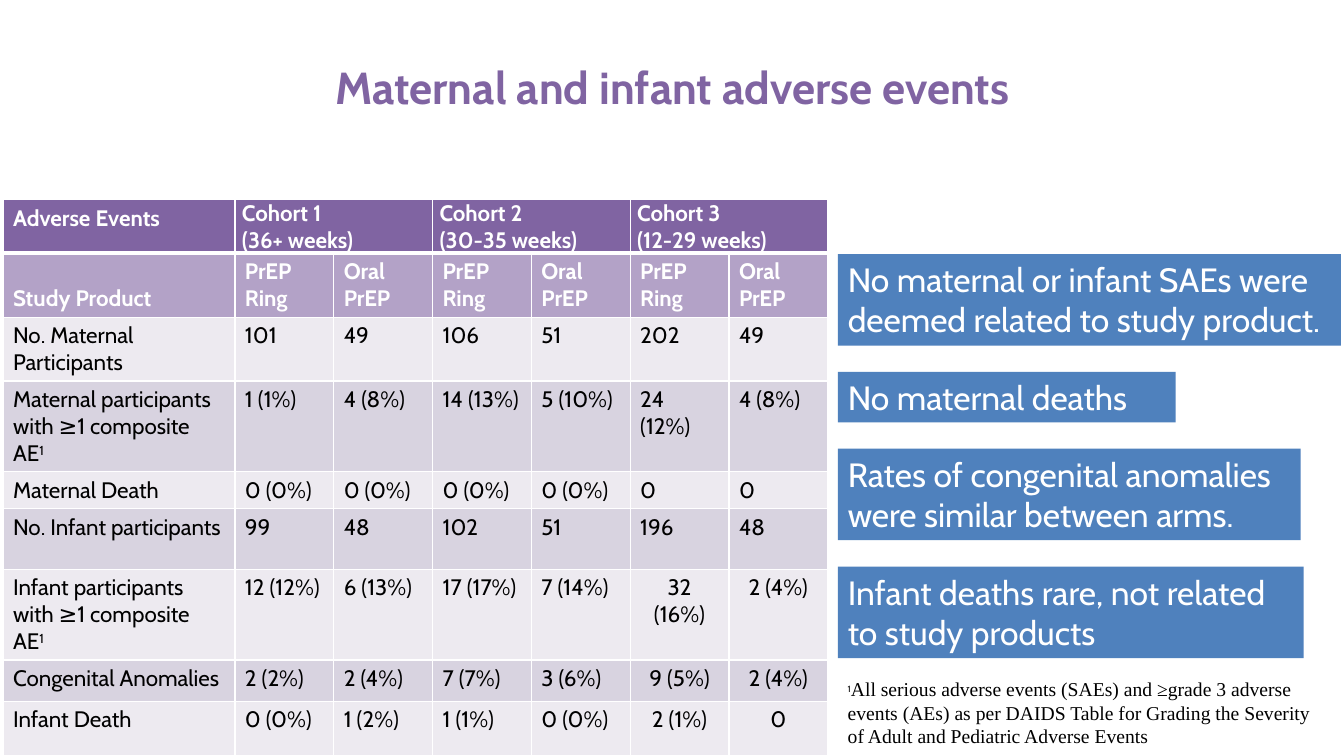
from lxml import etree
from pptx import Presentation
from pptx.dml.color import RGBColor
from pptx.enum.shapes import MSO_SHAPE
from pptx.enum.text import MSO_ANCHOR, PP_ALIGN
from pptx.oxml.ns import qn
from pptx.util import Pt

RECTANGLE = MSO_SHAPE.RECTANGLE
TOP, MIDDLE, BOTTOM = MSO_ANCHOR.TOP, MSO_ANCHOR.MIDDLE, MSO_ANCHOR.BOTTOM
LEFT, CENTER = PP_ALIGN.LEFT, PP_ALIGN.CENTER

COLORS = {
    "purple": "8064A2", "lilac": "B3A2C7", "pale": "EDEAF0", "mist": "D8D3E0",
    "blue": "4F81BD", "white": "FFFFFF", "black": "000000",
}
COHORTS = [("Cohort 1", "(36+ weeks)"), ("Cohort 2", "(30-35 weeks)"), ("Cohort 3", "(12-29 weeks)")]
EVENTS = [
    ["No. Maternal Participants", "101", "49", "106", "51", "202", "49"],
    ["Maternal participants with ≥1 composite AE^1",
     "1 (1%)", "4 (8%)", "14 (13%)", "5 (10%)", "24 (12%)", "4 (8%)"],
    ["Maternal Death", "0 (0%)", "0 (0%)", "0 (0%)", "0 (0%)", "0", "0"],
    ["No. Infant participants", "99", "48", "102", "51", "196", "48"],
    ["Infant participants with ≥1 composite AE^1",
     "12 (12%)", "6 (13%)", "17 (17%)", "7 (14%)", "32 (16%)", "2 (4%)"],
    ["Congenital Anomalies", "2 (2%)", "2 (4%)", "7 (7%)", "3 (6%)", "9 (5%)", "2 (4%)"],
    ["Infant Death", "0 (0%)", "1 (2%)", "1 (1%)", "0 (0%)", "2 (1%)", "0"],
]
COLUMN_WIDTHS = [230] + [98] * 6
ROW_HEIGHTS = [51, 60, 60, 66, 35, 60, 64, 41, 54]
FINDINGS = [
    ("No maternal or infant SAEs were deemed related to study product.", 252, 499, 91),
    ("No maternal deaths", 369, 335, 50),
    ("Rates of congenital anomalies were similar between arms.", 445, 459, 91),
    ("Infant deaths rare, not related to study products", 562, 462, 91),
]


class SlideBuilder:
    SCALE = 9144
    FONT = "Cabin"

    def __init__(self, deck):
        self.slide = deck.slides.add_slide(deck.slide_layouts[6])

    def px(self, *lengths):
        return [length * self.SCALE for length in lengths]

    def color(self, name):
        return RGBColor.from_string(COLORS[name])

    def run(self, paragraph, text, size, color, bold=False, font=FONT, raised=False):
        run = paragraph.add_run()
        run.text = text
        run.font.size = Pt(size)
        run.font.name = font
        run.font.bold = bold
        run.font.color.rgb = self.color(color)
        if raised:
            run._r.get_or_add_rPr().set("baseline", "30000")

    def text_box(self, left, top, width, height, anchor=TOP):
        frame = self.slide.shapes.add_textbox(*self.px(left, top, width, height)).text_frame
        frame.word_wrap = True
        frame.vertical_anchor = anchor
        return frame.paragraphs[0]

    def title(self, text):
        heading = self.text_box(67, 30, 1200, 125, MIDDLE)
        heading.alignment = CENTER
        heading.line_spacing = Pt(28.5)
        self.run(heading, text, 32, "purple", bold=True)

    def footnote(self, mark, text):
        note = self.text_box(831, 667, 490, 81)
        self.run(note, mark, 11, "black", raised=True)
        self.run(note, text, 14, "black", font="Times New Roman")

    def finding(self, text, top, width, height):
        banner = self.slide.shapes.add_shape(RECTANGLE, *self.px(831, top, width, height))
        banner.shadow.inherit = False
        banner.fill.solid()
        banner.fill.fore_color.rgb = self.color("blue")
        banner.line.fill.background()
        frame = banner.text_frame
        frame.word_wrap = True
        frame.vertical_anchor = TOP
        frame.paragraphs[0].alignment = LEFT
        self.run(frame.paragraphs[0], text, 24, "white")

    def table(self, left, top, widths, heights):
        table = self.slide.shapes.add_table(
            len(heights), len(widths), *self.px(left, top, sum(widths), sum(heights))).table
        for column, width in zip(table.columns, self.px(*widths)):
            column.width = width
        for row, height in zip(table.rows, self.px(*heights)):
            row.height = height
        return table

    def paint(self, cell, fill, bottom=1):
        properties = cell._tc.get_or_add_tcPr()
        for side, points in (("L", 1), ("R", 1), ("T", 1), ("B", bottom)):
            border = etree.SubElement(properties, qn(f"a:ln{side}"), w=str(Pt(points)))
            solid = etree.SubElement(border, qn("a:solidFill"))
            etree.SubElement(solid, qn("a:srgbClr"), val=COLORS["white"])
        cell.fill.solid()
        cell.fill.fore_color.rgb = self.color(fill)

    def cell(self, cell, lines, color="black", bold=False, align=LEFT, anchor=TOP):
        cell.vertical_anchor = anchor
        frame = cell.text_frame
        for index, line in enumerate(lines):
            paragraph = frame.add_paragraph() if index else frame.paragraphs[0]
            paragraph.alignment = align
            body, _, mark = line.partition("^")
            self.run(paragraph, body, 16, color, bold)
            if mark:
                self.run(paragraph, mark, 16, color, bold, raised=True)

    def cohort(self, table, column, lines):
        header = table.cell(0, column)
        header.merge(table.cell(0, column + 1))
        header.margin_left, header.margin_right, header.margin_top, header.margin_bottom = self.px(7, 7, 0, 0)
        self.cell(header, lines, "white", bold=True)


def main():
    deck = Presentation()
    deck.slide_width, deck.slide_height = 1333 * SlideBuilder.SCALE, 750 * SlideBuilder.SCALE
    builder = SlideBuilder(deck)
    builder.title("Maternal and infant adverse events")

    events = builder.table(3, 198, COLUMN_WIDTHS, ROW_HEIGHTS)
    for row in range(len(ROW_HEIGHTS)):
        fill = ("purple", "lilac")[row] if row < 2 else ("pale", "mist")[row % 2]
        for column in range(len(COLUMN_WIDTHS)):
            builder.paint(events.cell(row, column), fill, bottom=1 if row else 3)

    builder.cell(events.cell(0, 0), ["Adverse Events"], "white", bold=True)
    builder.cell(events.cell(1, 0), ["Study Product"], "white", bold=True, anchor=BOTTOM)
    for index, lines in enumerate(COHORTS):
        ring = 1 + 2 * index
        builder.cohort(events, ring, lines)
        for offset, product in enumerate(("PrEP Ring", "Oral PrEP")):
            builder.cell(events.cell(1, ring + offset), [product], "white", bold=True)
    for row, values in enumerate(EVENTS, 2):
        for column, value in enumerate(values):
            align = CENTER if row >= 6 and column >= 5 else LEFT
            builder.cell(events.cell(row, column), [value], align=align)

    builder.footnote("1", "All serious adverse events (SAEs) and ≥grade 3 adverse events (AEs) as per "
                     "DAIDS Table for Grading the Severity of Adult and Pediatric Adverse Events")
    for finding in FINDINGS:
        builder.finding(*finding)
    deck.save("out.pptx")


if __name__ == "__main__":
    main()
